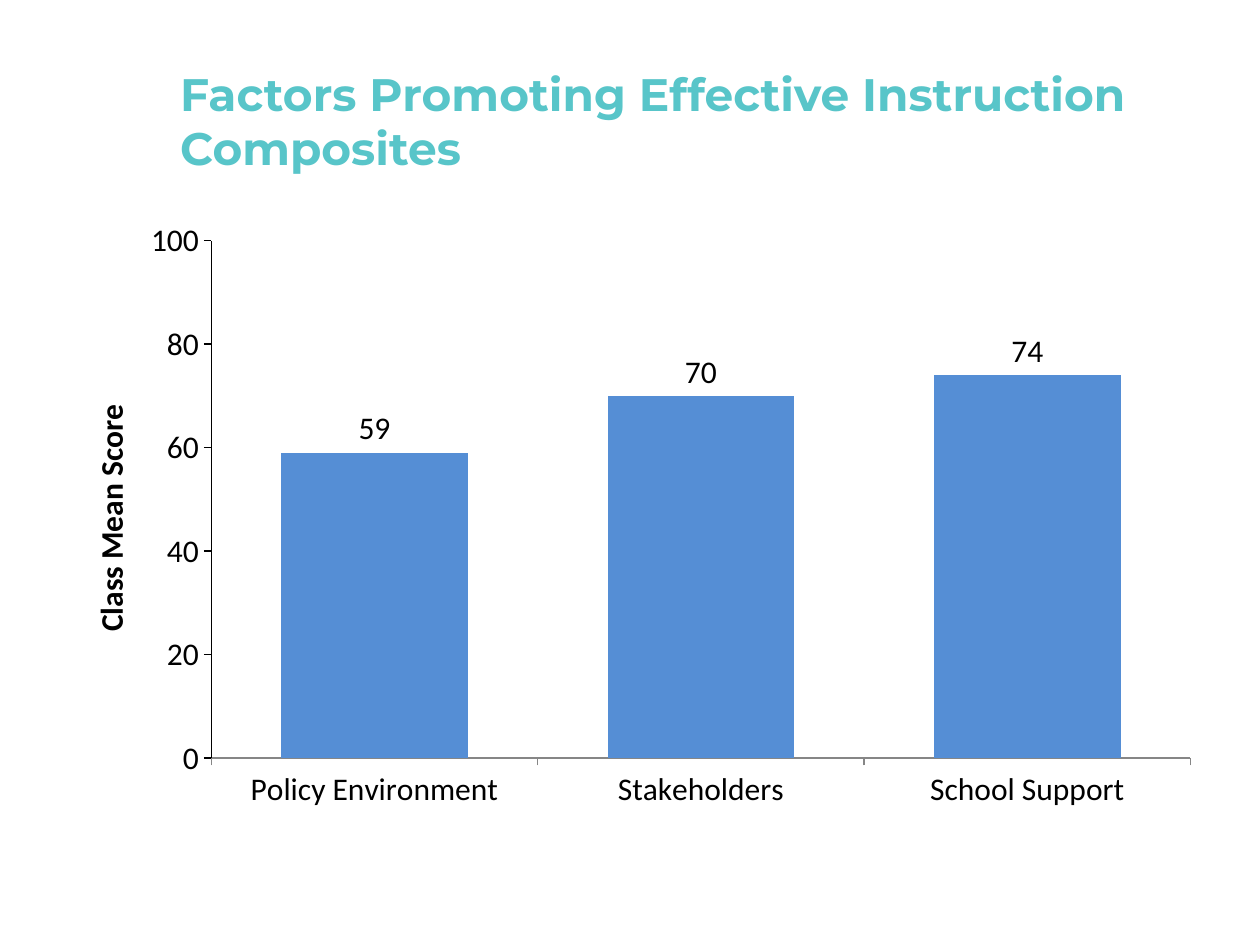
from dataclasses import dataclass

import pptx
import pptx.chart.data
import pptx.dml.color
import pptx.enum.chart
import pptx.enum.text
import pptx.oxml
import pptx.oxml.ns
import pptx.util
from pptx.util import Cm

RGBColor = pptx.dml.color.RGBColor


@dataclass(frozen=True)
class Theme:
    heading_font: str = "Montserrat"
    chart_font: str = "Calibri"
    heading_size: int = 26
    chart_size: int = 18
    heading_color: str = "58C5C9"
    bar_color: str = "558ED5"
    text_color: str = "000000"
    category_line_color: str = "868686"


THEME = Theme()
SCORES = {"Policy Environment": 59, "Stakeholders": 70, "School Support": 74}


def style_font(font, name, size, color, bold=False):
    font.name = name
    font.size = pptx.util.Pt(size)
    font.bold = bold
    font.color.rgb = RGBColor.from_string(color)


def style_chart_font(font, bold=False):
    style_font(font, THEME.chart_font, THEME.chart_size, THEME.text_color, bold)


def manual_layout(**settings):
    """Return a c:layout element with positions as fractions of the chart."""
    items = "".join(f'<c:{key} val="{value}"/>' for key, value in settings.items())
    namespace = pptx.oxml.ns.nsdecls("c")
    return pptx.oxml.parse_xml(
        f"<c:layout {namespace}><c:manualLayout>{items}</c:manualLayout></c:layout>"
    )


def replace_layout(parent, layout, index):
    for old_layout in parent.findall(pptx.oxml.ns.qn("c:layout")):
        parent.remove(old_layout)
    parent.insert(index, layout)


def add_heading(slide, text):
    box = slide.shapes.add_textbox(Cm(3.38), Cm(0.84), Cm(21.8), Cm(3.18))
    frame = box.text_frame
    frame.word_wrap = True
    frame.vertical_anchor = pptx.enum.text.MSO_ANCHOR.MIDDLE
    frame.text = text
    style_font(frame.paragraphs[0].runs[0].font, THEME.heading_font,
               THEME.heading_size, THEME.heading_color, bold=True)


def style_axis(axis, line_color):
    axis.has_major_gridlines = False
    axis.major_tick_mark = pptx.enum.chart.XL_TICK_MARK.OUTSIDE
    axis.minor_tick_mark = pptx.enum.chart.XL_TICK_MARK.NONE
    axis.format.line.color.rgb = RGBColor.from_string(line_color)
    axis.format.line.width = pptx.util.Pt(0.75)
    style_chart_font(axis.tick_labels.font)


def set_score_scale(axis, title):
    axis.minimum_scale, axis.maximum_scale, axis.major_unit = 0, 100, 20
    frame = axis.axis_title.text_frame
    frame.text = title
    style_chart_font(frame.paragraphs[0].runs[0].font, bold=True)
    layout = manual_layout(xMode="edge", yMode="edge", x=0.03, y=0.31)
    replace_layout(axis.axis_title._element, layout, 1)


def style_bars(plot):
    plot.gap_width = 75
    plot.overlap = 100
    plot.vary_by_categories = False
    fill = plot.series[0].format.fill
    fill.solid()
    fill.fore_color.rgb = RGBColor.from_string(THEME.bar_color)
    labels = plot.series[0].data_labels
    labels.show_value = True
    labels.position = pptx.enum.chart.XL_LABEL_POSITION.OUTSIDE_END
    style_chart_font(labels.font)


def add_score_chart(slide, scores):
    data = pptx.chart.data.CategoryChartData()
    data.categories = list(scores)
    data.add_series("Series 1", list(scores.values()))
    chart = slide.shapes.add_chart(
        pptx.enum.chart.XL_CHART_TYPE.COLUMN_CLUSTERED,
        Cm(0.97), Cm(4.24), Cm(23.5), Cm(12.27), data,
    ).chart
    chart.has_title = False
    chart.has_legend = False
    style_chart_font(chart.font)
    style_axis(chart.category_axis, THEME.category_line_color)
    style_axis(chart.value_axis, THEME.text_color)
    set_score_scale(chart.value_axis, "Class Mean Score")
    style_bars(chart.plots[0])
    plot_layout = manual_layout(layoutTarget="inner", xMode="edge", yMode="edge",
                                x=0.14, y=0.05, w=0.84, h=0.85)
    replace_layout(chart._chartSpace.chart.plotArea, plot_layout, 0)


def main():
    presentation = pptx.Presentation()
    presentation.slide_width, presentation.slide_height = Cm(25.4), Cm(19.05)
    slide = presentation.slides.add_slide(presentation.slide_layouts[6])
    add_score_chart(slide, SCORES)
    add_heading(slide, "Factors Promoting Effective Instruction Composites")
    presentation.save("out.pptx")


if __name__ == "__main__":
    main()
